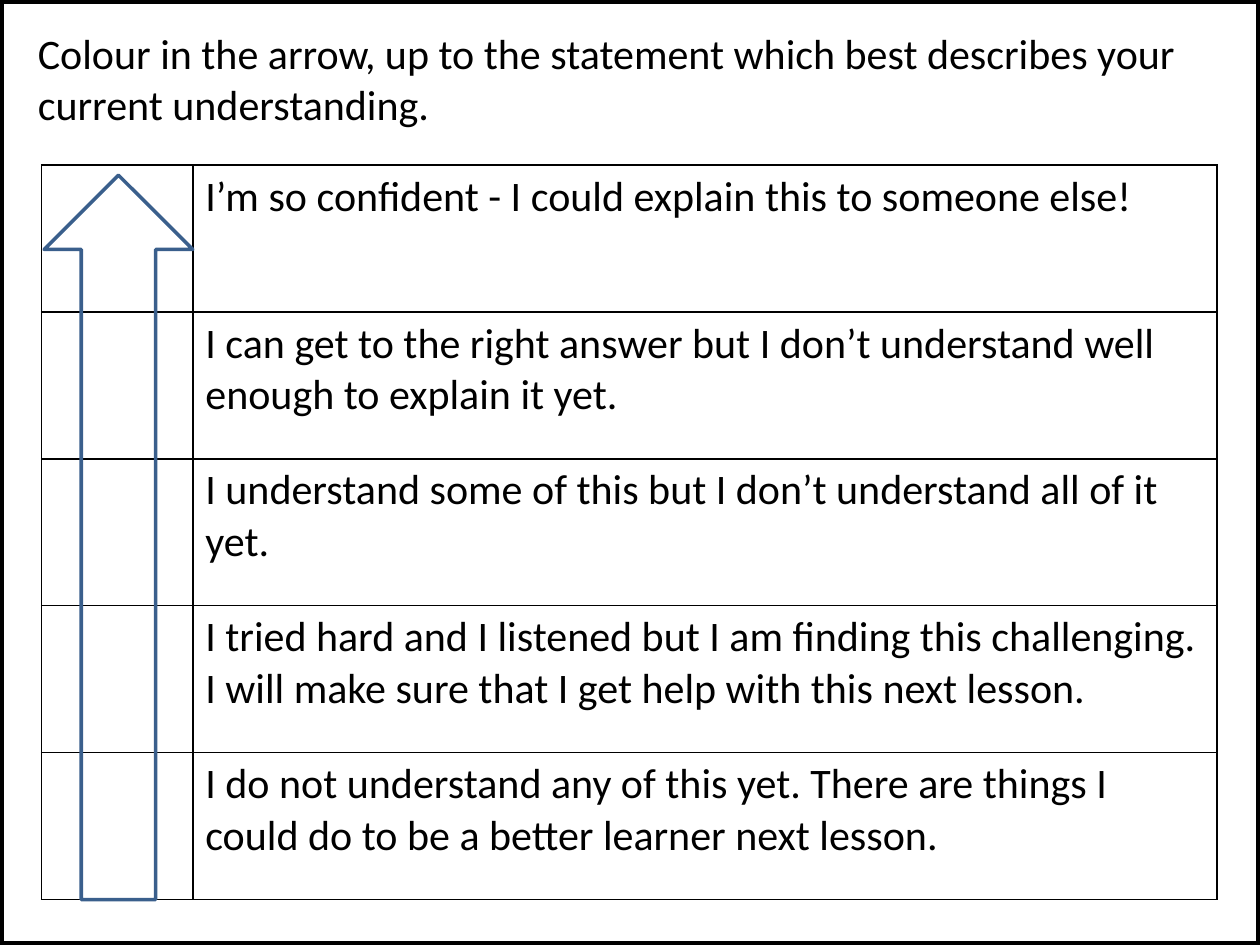
from lxml import etree
from pptx import Presentation
from pptx.dml.color import RGBColor
from pptx.enum.shapes import MSO_SHAPE
from pptx.enum.text import MSO_ANCHOR, PP_ALIGN
from pptx.oxml.ns import qn
from pptx.util import Inches, Pt

RECTANGLE, UP_ARROW = MSO_SHAPE.RECTANGLE, MSO_SHAPE.UP_ARROW
LEFT, TOP = PP_ALIGN.LEFT, MSO_ANCHOR.TOP

INSTRUCTION = ("Colour in the arrow, up to the statement which best describes "
               "your current understanding.")
STATEMENTS = [
    "I’m so confident - I could explain this to someone else!",
    "I can get to the right answer but I don’t understand well enough to explain it yet.",
    "I understand some of this but I don’t understand all of it yet.",
    "I tried hard and I listened but I am finding this challenging. "
    "I will make sure that I get help with this next lesson.",
    "I do not understand any of this yet. There are things I could do "
    "to be a better learner next lesson.",
]
COLOURS = {"ink": "000000", "paper": "FFFFFF", "arrow": "3A5F8C"}
SLIDE_WIDTH, SLIDE_HEIGHT = 10, 7.5
TABLE_LEFT, TABLE_TOP, TABLE_HEIGHT = 0.33, 1.31, 5.83
COLUMN_WIDTHS = [1.2, 8.13]
ARROW_WIDTH, ARROW_GAP = 1.18, 0.08


def colour(name):
    return RGBColor.from_string(COLOURS[name])


def write_text(frame, text, size=24, font="Calibri", ink="ink", align=LEFT):
    frame.word_wrap = True
    paragraph = frame.paragraphs[0]
    paragraph.alignment = align
    run = paragraph.add_run()
    run.text = text
    run.font.size = Pt(size)
    run.font.name = font
    run.font.color.rgb = colour(ink)


def add_outline(slide, preset, box, line_colour, line_width):
    shape = slide.shapes.add_shape(preset, *map(Inches, box))
    shape.shadow.inherit = False
    shape.fill.background()
    shape.line.color.rgb = colour(line_colour)
    shape.line.width = Pt(line_width)


def add_borders(cell, width=1):
    properties = cell._tc.get_or_add_tcPr()
    for position, side in enumerate(("a:lnL", "a:lnR", "a:lnT", "a:lnB")):
        line = etree.Element(qn(side), w=str(Pt(width)))
        fill = etree.SubElement(line, qn("a:solidFill"))
        etree.SubElement(fill, qn("a:srgbClr"), val=COLOURS["ink"])
        properties.insert(position, line)


def add_instruction(slide):
    title = slide.shapes.title
    title.left, title.top = Inches(0.2), Inches(0.17)
    title.width, title.height = Inches(9.39), Inches(0.91)
    title.fill.solid()
    title.fill.fore_color.rgb = colour("paper")
    title.text_frame.vertical_anchor = TOP
    write_text(title.text_frame, INSTRUCTION)


def add_statements(slide):
    box = (TABLE_LEFT, TABLE_TOP, sum(COLUMN_WIDTHS), TABLE_HEIGHT)
    table = slide.shapes.add_table(
        len(STATEMENTS), len(COLUMN_WIDTHS), *map(Inches, box)).table
    table.first_row = table.horz_banding = False
    for column, width in zip(table.columns, COLUMN_WIDTHS):
        column.width = Inches(width)
    for cell in table.iter_cells():
        cell.fill.background()
        add_borders(cell)
    for row, statement in zip(table.rows, STATEMENTS):
        write_text(row.cells[1].text_frame, statement)


def main():
    presentation = Presentation()
    presentation.slide_width = Inches(SLIDE_WIDTH)
    presentation.slide_height = Inches(SLIDE_HEIGHT)
    title_only = presentation.slide_layouts.get_by_name("Title Only")
    slide = presentation.slides.add_slide(title_only)

    add_instruction(slide)
    add_outline(slide, RECTANGLE, (0, 0, SLIDE_WIDTH, SLIDE_HEIGHT), "ink", 5)
    add_statements(slide)
    arrow_left = TABLE_LEFT + COLUMN_WIDTHS[0] - ARROW_WIDTH
    arrow_box = (arrow_left, TABLE_TOP + ARROW_GAP,
                 ARROW_WIDTH, TABLE_HEIGHT - ARROW_GAP)
    add_outline(slide, UP_ARROW, arrow_box, "arrow", 2)
    presentation.save("out.pptx")


if __name__ == "__main__":
    main()
